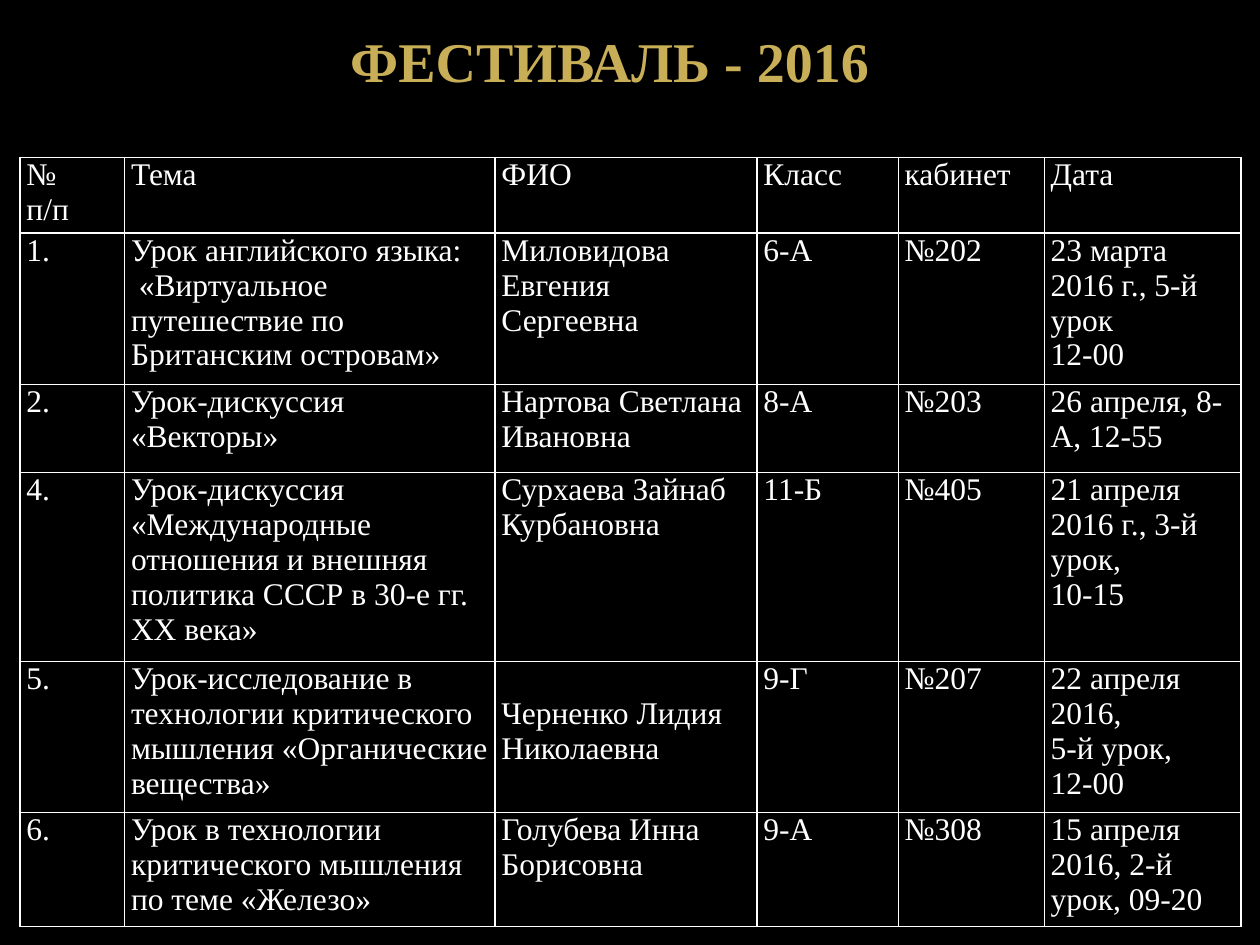
from lxml.etree import SubElement
from pptx import Presentation
from pptx.dml.color import RGBColor
from pptx.enum.text import MSO_AUTO_SIZE, PP_ALIGN
from pptx.oxml.ns import qn
from pptx.util import Inches, Pt

BLACK = RGBColor(0x00, 0x00, 0x00)
WHITE = RGBColor(0xFF, 0xFF, 0xFF)
GOLD = RGBColor(0xC8, 0xAF, 0x57)

COLUMNS = [8.3, 29.4, 20.8, 11.2, 11.6, 15.6]
ROWS = [8.04, 15.97, 9.31, 20, 15.97, 12.07]
LESSONS = [
    ["№\nп/п", "Тема", "ФИО", "Класс", "кабинет", "Дата"],
    ["1.", "Урок английского языка:\n «Виртуальное путешествие по Британским островам»",
     "Миловидова Евгения Сергеевна", "6-А", "№202", "23 марта 2016 г., 5-й урок\n12-00"],
    ["2.", "Урок-дискуссия «Векторы»",
     "Нартова Светлана Ивановна", "8-А", "№203", "26 апреля, 8-А, 12-55"],
    ["4.", "Урок-дискуссия «Международные отношения и внешняя политика СССР в 30-е гг. XX века»",
     "Сурхаева Зайнаб Курбановна", "11-Б", "№405", "21 апреля 2016 г., 3-й урок,\n10-15"],
    ["5.", "Урок-исследование в технологии критического мышления «Органические вещества»",
     "Черненко Лидия Николаевна", "9-Г", "№207", "22 апреля 2016,\n5-й урок,\n12-00"],
    ["6.", "Урок в технологии критического мышления по теме «Железо»",
     "Голубева Инна Борисовна", "9-А", "№308", "15 апреля 2016, 2-й урок, 09-20"],
]


class Deck:
    font = "Times New Roman"

    def __init__(self, width, height):
        self.prs = Presentation()
        self.prs.slide_width = Inches(width)
        self.prs.slide_height = Inches(height)
        self.s = None

    def slide(self, color):
        self.s = self.prs.slides.add_slide(self.prs.slide_layouts[6])
        fill = self.s.background.fill
        fill.solid()
        fill.fore_color.rgb = color

    def x(self, share):
        return round(self.prs.slide_width * share / 100)

    def y(self, share):
        return round(self.prs.slide_height * share / 100)

    def text(self, tf, text, size, color, bold=False, align=PP_ALIGN.LEFT):
        tf.text = text
        for p in tf.paragraphs:
            p.alignment = align
            p.font.name = self.font
            p.font.size = Pt(size)
            p.font.bold = bold
            p.font.color.rgb = color

    def title(self, text, left, top, width, height):
        sp = self.s.shapes.add_textbox(self.x(left), self.y(top), self.x(width), self.y(height))
        tf = sp.text_frame
        tf.word_wrap = False
        tf.auto_size = MSO_AUTO_SIZE.SHAPE_TO_FIT_TEXT
        self.text(tf, text, 32, GOLD, True, PP_ALIGN.CENTER)

    def border(self, cell, color):
        tc_pr = cell._tc.get_or_add_tcPr()
        for side in ("a:lnL", "a:lnR", "a:lnT", "a:lnB"):
            ln = SubElement(tc_pr, qn(side), w=str(Pt(1)))
            SubElement(SubElement(ln, qn("a:solidFill")), qn("a:srgbClr"), val=str(color))

    def table(self, data, left, top, columns, rows):
        frame = self.s.shapes.add_table(len(rows), len(columns), self.x(left), self.y(top),
                                        self.x(sum(columns)), self.y(sum(rows)))
        table = frame.table
        table.first_row = table.horz_banding = False
        for column, share in zip(table.columns, columns):
            column.width = self.x(share)
        for row, share, texts in zip(table.rows, rows, data):
            row.height = self.y(share)
            for cell, text in zip(row.cells, texts):
                cell.margin_left = cell.margin_right = Inches(0.05)
                cell.margin_top = cell.margin_bottom = 0
                self.border(cell, WHITE)
                cell.fill.background()
                self.text(cell.text_frame, text, 18, WHITE)
        return table


def main():
    deck = Deck(10, 7.5)
    deck.slide(BLACK)
    deck.title("ФЕСТИВАЛЬ - 2016", 26.6, 2.13, 43.6, 8.53)
    table = deck.table(LESSONS, 1.6, 16.64, COLUMNS, ROWS)
    table.cell(4, 2).margin_top = Inches(0.28)
    deck.prs.save("out.pptx")


if __name__ == "__main__":
    main()
